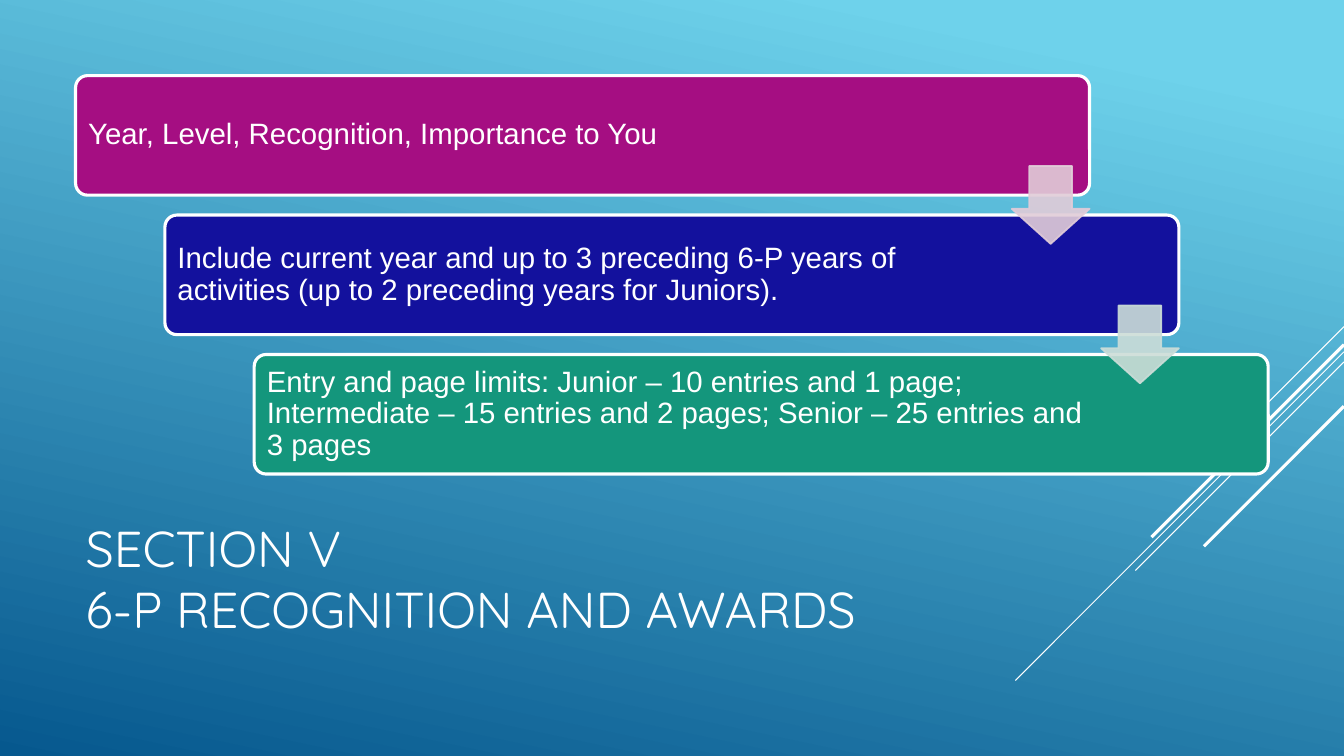
import pptx
import pptx.util
import pptx.dml.color
import pptx.enum.shapes
import pptx.enum.text
import pptx.oxml.ns
from lxml import etree

Pt = pptx.util.Pt
Shape = pptx.enum.shapes.MSO_SHAPE
Text = pptx.enum.text

HEX = {
    "white": "FFFFFF", "sky": "6ED2EB", "deep": "06588E",
    "plum": "A50E82", "navy": "13119D", "green": "14967C",
    "pink": "E1CCD8", "mist": "CCDDD8",
}
TITLE = ["SECTION V", "6-P RECOGNITION AND AWARDS"]
CARDS = [
    ("Year, Level, Recognition, Importance to You", "plum"),
    ("Include current year and up to 3 preceding 6-P years of activities "
     "(up to 2 preceding years for Juniors).", "navy"),
    ("Entry and page limits: Junior – 10 entries and 1 page; Intermediate – "
     "15 entries and 2 pages; Senior – 25 entries and 3 pages", "green"),
]
ARROWS = ["pink", "mist"]
# Diagonal rays from the right edge: top, run, line width
RAYS = [(233.3, 72, 0.75), (251.3, 234.7, 0.75), (258.5, 149, 0.75),
        (246.2, 137.5, 2.25), (290.2, 100, 2.25)]

WIDE, HIGH = 960, 540
EDGE = 54
STEP_X, STEP_Y = 63.8, 99.6
CARD_W, CARD_H = 724.3, 85.4
ARROW = 55.6
ARROW_Y = 118.6


def rgb(name):
    return pptx.dml.color.RGBColor.from_string(HEX[name])


def fade(part, share):
    """Set the opacity, in percent, of every solid colour in a shape."""
    for color in part._element.spPr.iter(pptx.oxml.ns.qn("a:srgbClr")):
        alpha = etree.SubElement(color, pptx.oxml.ns.qn("a:alpha"))
        alpha.set("val", str(share * 1000))


def add_run(para, text, font, size):
    run = para.add_run()
    run.text = text
    run.font.name = font
    run.font.size = Pt(size)
    run.font.color.rgb = rgb("white")


def add_block(slide, kind, box, adjust, fill, line, width):
    block = slide.shapes.add_shape(kind, *map(Pt, box))
    for index, value in enumerate(adjust):
        block.adjustments[index] = value
    block.shadow.inherit = False
    block.fill.solid()
    block.fill.fore_color.rgb = rgb(fill)
    block.line.color.rgb = rgb(line)
    block.line.width = Pt(width)
    return block


def add_ray(slide, top, run, width):
    ray = slide.shapes.add_connector(
        pptx.enum.shapes.MSO_CONNECTOR.STRAIGHT,
        Pt(WIDE), Pt(top), Pt(WIDE - run), Pt(top + run))
    ray.line.color.rgb = rgb("white")
    ray.line.width = Pt(width)
    etree.SubElement(ray._element.spPr, pptx.oxml.ns.qn("a:effectLst"))


def add_card(slide, index, text, fill):
    box = (EDGE + index * STEP_X, EDGE + index * STEP_Y, CARD_W, CARD_H)
    card = add_block(slide, Shape.ROUNDED_RECTANGLE, box, [0.1],
                     fill, "white", 2.25)
    frame = card.text_frame
    frame.word_wrap = True
    frame.vertical_anchor = Text.MSO_ANCHOR.MIDDLE
    frame.margin_left, frame.margin_right = Pt(6.5), Pt(126.5)
    frame.margin_top = frame.margin_bottom = Pt(4)
    para = frame.paragraphs[0]
    para.alignment = Text.PP_ALIGN.LEFT
    para.line_spacing = 0.9
    add_run(para, text, "Arial", 21)


def add_arrow(slide, index, fill):
    left = EDGE + CARD_W - ARROW + index * STEP_X
    box = (left, ARROW_Y + index * STEP_Y, ARROW, ARROW)
    arrow = add_block(slide, Shape.DOWN_ARROW, box, [0.55, 0.45],
                      fill, fill, 1.25)
    fade(arrow, 90)


def set_title(slide):
    title = slide.shapes.title
    title.left, title.top = Pt(EDGE), Pt(353.5)
    title.width, title.height = Pt(672), Pt(118.8)
    frame = title.text_frame
    frame.auto_size = Text.MSO_AUTO_SIZE.NONE
    frame.vertical_anchor = Text.MSO_ANCHOR.MIDDLE
    para = frame.paragraphs[0]
    para.alignment = Text.PP_ALIGN.LEFT
    for index, line in enumerate(TITLE):
        if index:
            para.add_line_break()
        add_run(para, line, "Quicksand", 36)


def set_back(slide):
    fill = slide.background.fill
    fill.gradient()
    fill.gradient_angle = 360 - 102
    for stop, name, place in zip(fill.gradient_stops, ("sky", "deep"), (0.1, 1)):
        stop.color.rgb = rgb(name)
        stop.position = place


def main():
    deck = pptx.Presentation()
    deck.slide_width, deck.slide_height = Pt(WIDE), Pt(HIGH)
    slide = deck.slides.add_slide(deck.slide_layouts[5])
    set_back(slide)
    for ray in RAYS:
        add_ray(slide, *ray)
    set_title(slide)
    for index, (text, fill) in enumerate(CARDS):
        add_card(slide, index, text, fill)
    for index, fill in enumerate(ARROWS):
        add_arrow(slide, index, fill)
    deck.save("out.pptx")


if __name__ == "__main__":
    main()
